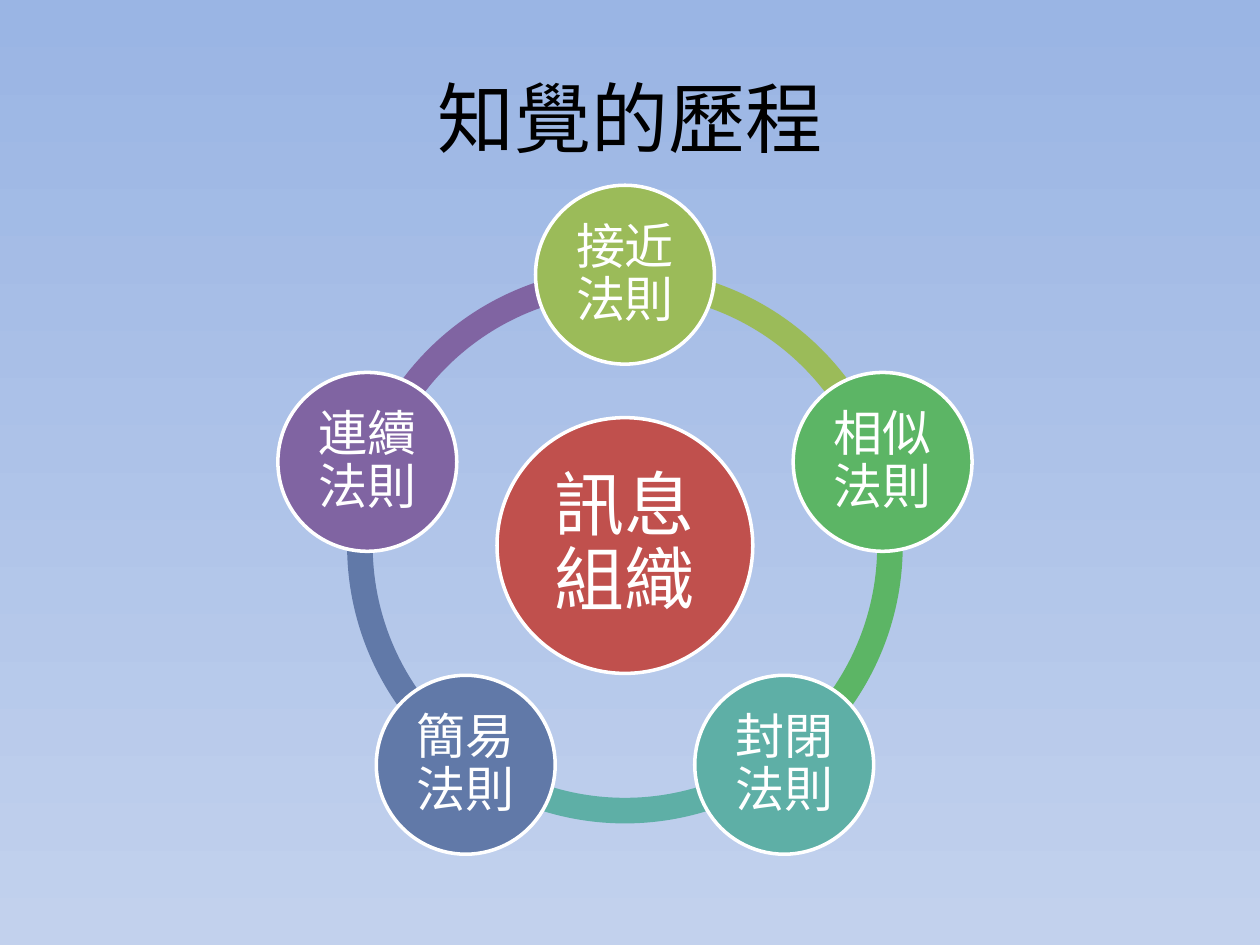
import math
from dataclasses import dataclass

from lxml import etree
from pptx import Presentation
from pptx.dml.color import RGBColor
from pptx.enum.shapes import MSO_SHAPE
from pptx.enum.text import MSO_ANCHOR, PP_ALIGN
from pptx.oxml.ns import qn
from pptx.util import Inches, Pt

BLOCK_ARC = MSO_SHAPE.BLOCK_ARC
OVAL = MSO_SHAPE.OVAL
MIDDLE = MSO_ANCHOR.MIDDLE
CENTER = PP_ALIGN.CENTER
TITLE_ONLY_LAYOUT = 5


@dataclass(frozen=True)
class Theme:
    font: str = "Noto Sans CJK SC"
    title_size: int = 44
    hub_size: int = 40
    law_size: int = 28
    outline_width: int = 2
    background_top: str = "9AB5E4"
    background_bottom: str = "C2D1ED"
    title: str = "000000"
    light: str = "FFFFFF"
    hub: str = "C0504D"
    laws: tuple = ("9BBB59", "5CB565", "5EAFA6", "6179A8", "8064A2")


class SlideBuilder:
    def __init__(self, slide, theme):
        self.slide = slide
        self.theme = theme

    def background(self):
        fill = self.slide.background.fill
        fill.gradient()
        fill.gradient_angle = 270
        colors = (self.theme.background_top, self.theme.background_bottom)
        for stop, color in zip(fill.gradient_stops, colors):
            stop.color.rgb = RGBColor.from_string(color)

    def add_text(self, text_frame, text, size, color):
        text_frame.word_wrap = True
        text_frame.vertical_anchor = MIDDLE
        paragraph = text_frame.paragraphs[0]
        paragraph.alignment = CENTER
        run = paragraph.add_run()
        run.text = text
        run.font.size = Pt(size)
        run.font.color.rgb = RGBColor.from_string(color)
        run.font.name = self.theme.font
        east_asian = etree.SubElement(run.font._element, qn("a:ea"))
        east_asian.set("typeface", self.theme.font)
        return paragraph

    def title(self, text, left, top, width, height):
        shape = self.slide.shapes.title
        shape.left, shape.top = Inches(left), Inches(top)
        shape.width, shape.height = Inches(width), Inches(height)
        self.add_text(shape.text_frame, text, self.theme.title_size, self.theme.title)

    def round_shape(self, kind, center_x, center_y, diameter, color):
        shape = self.slide.shapes.add_shape(
            kind,
            Inches(center_x - diameter / 2),
            Inches(center_y - diameter / 2),
            Inches(diameter),
            Inches(diameter),
        )
        shape.shadow.inherit = False
        shape.fill.solid()
        shape.fill.fore_color.rgb = RGBColor.from_string(color)
        return shape

    def arc(self, center_x, center_y, diameter, start, end, thickness, color):
        """Draw a ring segment clockwise from start to end, in degrees from the right."""
        shape = self.round_shape(BLOCK_ARC, center_x, center_y, diameter, color)
        shape.line.fill.background()
        # Angles are stored in 1/60000 degree, adjustments in 1/100000.
        shape.adjustments[0] = start % 360 * 0.6
        shape.adjustments[1] = end % 360 * 0.6
        shape.adjustments[2] = thickness

    def circle(self, center_x, center_y, diameter, color, text, size, inset):
        shape = self.round_shape(OVAL, center_x, center_y, diameter, color)
        shape.line.color.rgb = RGBColor.from_string(self.theme.light)
        shape.line.width = Pt(self.theme.outline_width)
        frame = shape.text_frame
        frame.margin_left = frame.margin_right = Inches(inset)
        frame.margin_top = frame.margin_bottom = Inches(inset)
        paragraph = self.add_text(frame, text, size, self.theme.light)
        paragraph.line_spacing = 0.9


def main():
    presentation = Presentation()
    presentation.slide_width, presentation.slide_height = Inches(10), Inches(7.5)
    slide = presentation.slides.add_slide(presentation.slide_layouts[TITLE_ONLY_LAYOUT])
    theme = Theme()
    builder = SlideBuilder(slide, theme)
    builder.background()
    builder.title("知覺的歷程", 0.5, 0.3, 9, 1.25)

    center_x, center_y, orbit = 4.96, 4.33, 2.15
    laws = ["接近法則", "相似法則", "封閉法則", "簡易法則", "連續法則"]
    step = 360 / len(laws)
    angles = [270 + index * step for index in range(len(laws))]

    for angle, color in reversed(list(zip(angles, theme.laws))):
        builder.arc(center_x, center_y, 4.41, angle, angle + step, 0.046, color)
    builder.circle(center_x, center_y, 2.03, theme.hub, "訊息組織", theme.hub_size, 0.06)
    for law, angle, color in zip(laws, angles, theme.laws):
        law_x = center_x + orbit * math.cos(math.radians(angle))
        law_y = center_y + orbit * math.sin(math.radians(angle))
        builder.circle(law_x, law_y, 1.42, color, law, theme.law_size, 0.04)

    presentation.save("out.pptx")


if __name__ == "__main__":
    main()
